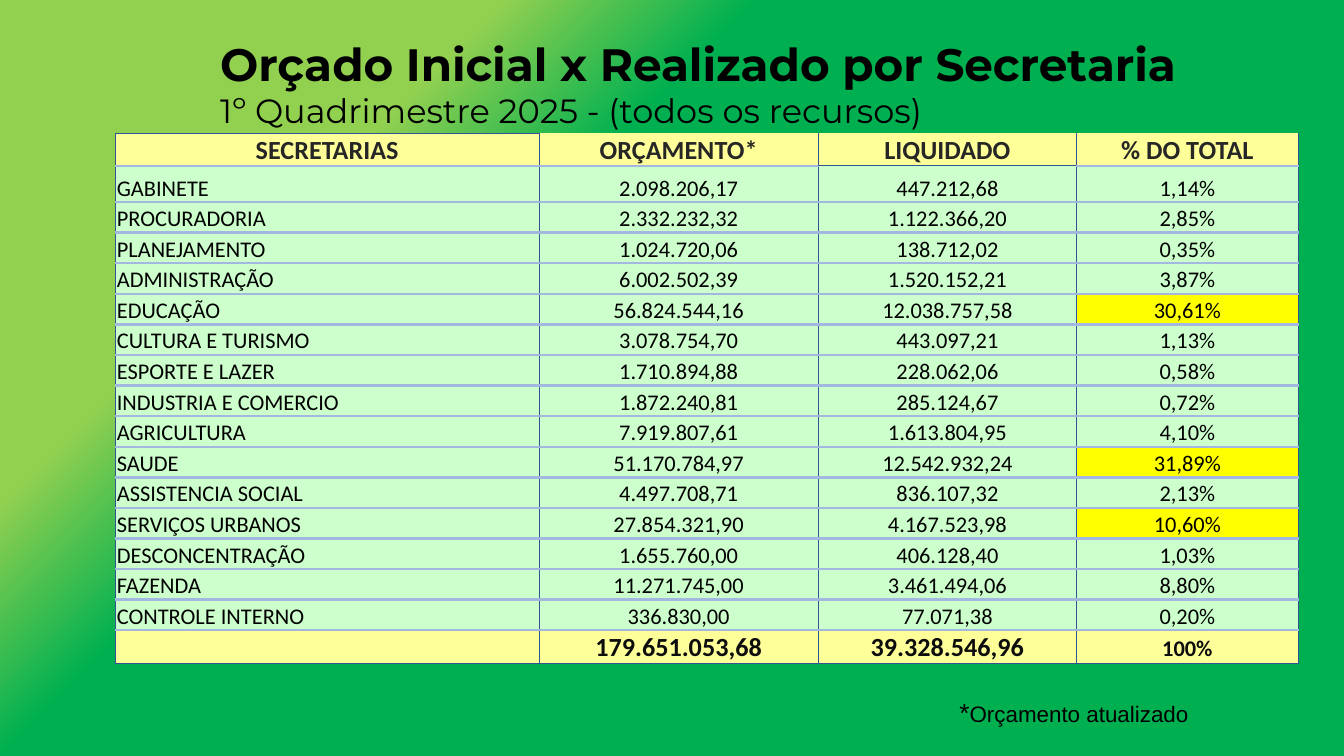
from pptx import Presentation
from pptx.dml.color import RGBColor
from pptx.enum.text import MSO_ANCHOR, MSO_AUTO_SIZE, PP_ALIGN
from pptx.oxml.ns import qn
from pptx.oxml.xmlchemy import OxmlElement
from pptx.util import Inches, Pt

BOTTOM, TOP = MSO_ANCHOR.BOTTOM, MSO_ANCHOR.TOP
LEFT, CENTER = PP_ALIGN.LEFT, PP_ALIGN.CENTER
FIT_SHAPE = MSO_AUTO_SIZE.SHAPE_TO_FIT_TEXT

BLACK = RGBColor(0x00, 0x00, 0x00)
HEADER_INK = RGBColor(0x26, 0x26, 0x26)
TOTAL_INK = RGBColor(0x0D, 0x0D, 0x0D)
LIME = RGBColor(0x92, 0xD0, 0x50)
GREEN = RGBColor(0x00, 0xB0, 0x50)
CREAM = RGBColor(0xFF, 0xFF, 0x99)
MINT = RGBColor(0xCC, 0xFF, 0xCC)
YELLOW = RGBColor(0xFF, 0xFF, 0x00)
NAVY = RGBColor(0x30, 0x54, 0x96)
PALE_BLUE = RGBColor(0xA2, 0xB8, 0xE1)

THIN = (NAVY, 0.5)
THICK = (PALE_BLUE, 1.5)

HEADER = ("SECRETARIAS", "ORÇAMENTO*", "LIQUIDADO", "% DO TOTAL")
BODY = [
    ("GABINETE", "2.098.206,17", "447.212,68", "1,14%"),
    ("PROCURADORIA", "2.332.232,32", "1.122.366,20", "2,85%"),
    ("PLANEJAMENTO", "1.024.720,06", "138.712,02", "0,35%"),
    ("ADMINISTRAÇÃO", "6.002.502,39", "1.520.152,21", "3,87%"),
    ("EDUCAÇÃO", "56.824.544,16", "12.038.757,58", "30,61%"),
    ("CULTURA E TURISMO", "3.078.754,70", "443.097,21", "1,13%"),
    ("ESPORTE E LAZER", "1.710.894,88", "228.062,06", "0,58%"),
    ("INDUSTRIA E COMERCIO", "1.872.240,81", "285.124,67", "0,72%"),
    ("AGRICULTURA", "7.919.807,61", "1.613.804,95", "4,10%"),
    ("SAUDE", "51.170.784,97", "12.542.932,24", "31,89%"),
    ("ASSISTENCIA SOCIAL", "4.497.708,71", "836.107,32", "2,13%"),
    ("SERVIÇOS URBANOS", "27.854.321,90", "4.167.523,98", "10,60%"),
    ("DESCONCENTRAÇÃO", "1.655.760,00", "406.128,40", "1,03%"),
    ("FAZENDA", "11.271.745,00", "3.461.494,06", "8,80%"),
    ("CONTROLE INTERNO", "336.830,00", "77.071,38", "0,20%"),
]
TOTAL = ("", "179.651.053,68", "39.328.546,96", "100%")
HIGHLIGHTS = {"30,61%", "31,89%", "10,60%"}

TABLE_HEIGHT = 3.94
EDGE_ROW, FIRST_ROW = 0.24, 0.27
COLUMNS = (3.15, 2.08, 1.92, 1.65)


class SlideBuilder:
    def __init__(self, slide):
        self.s = slide

    def background(self, stops, angle):
        """Fill the slide with a linear gradient; angle is clockwise degrees."""
        fill = self.s.background.fill
        fill.gradient()
        grad = self.s.background._cSld.find(".//" + qn("a:gradFill"))
        gs_list = grad.find(qn("a:gsLst"))
        for gs in list(gs_list):
            gs_list.remove(gs)
        for position, color in stops:
            gs = OxmlElement("a:gs")
            gs.set("pos", str(position * 1000))
            clr = OxmlElement("a:srgbClr")
            clr.set("val", str(color))
            gs.append(clr)
            gs_list.append(gs)
        lin = grad.find(qn("a:lin"))
        lin.set("ang", str(angle * 60000))
        lin.set("scaled", "0")

    def style(self, r, font, size, color=BLACK, bold=False):
        r.font.name = font
        r.font.size = Pt(size)
        r.font.bold = bold
        r.font.color.rgb = color

    def text(self, x, y, w, h, text, anchor=TOP):
        sp = self.s.shapes.add_textbox(Inches(x), Inches(y), Inches(w), Inches(h))
        tf = sp.text_frame
        tf.word_wrap = True
        tf.vertical_anchor = anchor
        tf.text = text
        return tf

    def border(self, cell, side, line):
        tc_pr = cell._tc.get_or_add_tcPr()
        ln = OxmlElement("a:ln" + side)
        if line:
            color, width = line
            ln.set("w", str(Pt(width)))
            fill = OxmlElement("a:solidFill")
            clr = OxmlElement("a:srgbClr")
            clr.set("val", str(color))
            fill.append(clr)
        else:
            fill = OxmlElement("a:noFill")
        ln.append(fill)
        tc_pr.append(ln)

    def cell(self, cell, text, fill, top, bottom, size, color, bold, align):
        for side, line in zip("LRTB", (THIN, THIN, top, bottom)):
            self.border(cell, side, line)
        cell.fill.solid()
        cell.fill.fore_color.rgb = fill
        cell.margin_left = cell.margin_right = cell.margin_top = Inches(0.01)
        cell.margin_bottom = 0
        cell.vertical_anchor = BOTTOM
        p = cell.text_frame.paragraphs[0]
        p.alignment = align
        if text:
            p.text = text
            self.style(p.runs[0], "Calibri", size, color, bold)
        else:
            end = OxmlElement("a:endParaRPr")
            end.set("sz", str(size * 100))
            p._p.append(end)

    def table(self, x, y):
        rows = [HEADER, *BODY, TOTAL]
        last = len(rows) - 1
        table = self.s.shapes.add_table(
            len(rows), len(COLUMNS), Inches(x), Inches(y),
            Inches(sum(COLUMNS)), Inches(TABLE_HEIGHT)).table
        table.first_row = table.horz_banding = False
        for column, width in zip(table.columns, COLUMNS):
            column.width = Inches(width)

        body_row = (TABLE_HEIGHT - 2 * EDGE_ROW - FIRST_ROW) / (len(BODY) - 1)
        heights = {0: EDGE_ROW, 1: FIRST_ROW, last: EDGE_ROW}
        for i, values in enumerate(rows):
            table.rows[i].height = Inches(heights.get(i, body_row))
            for j, value in enumerate(values):
                top = bottom = THICK
                fill, size, color, bold = MINT, 12, BLACK, False
                align = CENTER if j or i == 0 else LEFT
                if i == 0:
                    fill, size, color, bold = CREAM, 14, HEADER_INK, True
                    top = THIN if j == 0 else None
                    bottom = THIN if j == 2 else THICK
                elif i == last:
                    fill, color, bold = CREAM, TOTAL_INK, True
                    size = 14 if j in (1, 2) else 12
                    bottom = THIN
                elif value in HIGHLIGHTS:
                    fill = YELLOW
                elif i == 1 and j == 2:
                    top = THIN
                self.cell(table.cell(i, j), value, fill, top, bottom,
                          size, color, bold, align)


def main():
    prs = Presentation()
    prs.slide_width = Inches(10)
    prs.slide_height = prs.slide_width * 9 // 16
    b = SlideBuilder(prs.slides.add_slide(prs.slide_layouts[6]))
    b.background([(0, LIME), (24, LIME), (36, GREEN), (100, GREEN)], 45)

    title = b.text(1.54, 0.16, 8.12, 0.86,
                   "Orçado Inicial x Realizado por Secretaria\v"
                   "1º Quadrimestre 2025 - (todos os recursos)", BOTTOM)
    heading, subtitle = title.paragraphs[0].runs
    b.style(heading, "Montserrat", 24.3, bold=True)
    b.style(subtitle, "Montserrat", 18)

    note = b.text(7.04, 5.13, 2.24, 0.34, "*")
    note.auto_size = FIT_SHAPE
    p = note.paragraphs[0]
    b.style(p.runs[0], "Arial", 14)
    r = p.add_run()
    r.text = "Orçamento atualizado"
    b.style(r, "Arial", 12)

    b.table(0.86, 0.99)
    prs.save("out.pptx")


if __name__ == "__main__":
    main()
